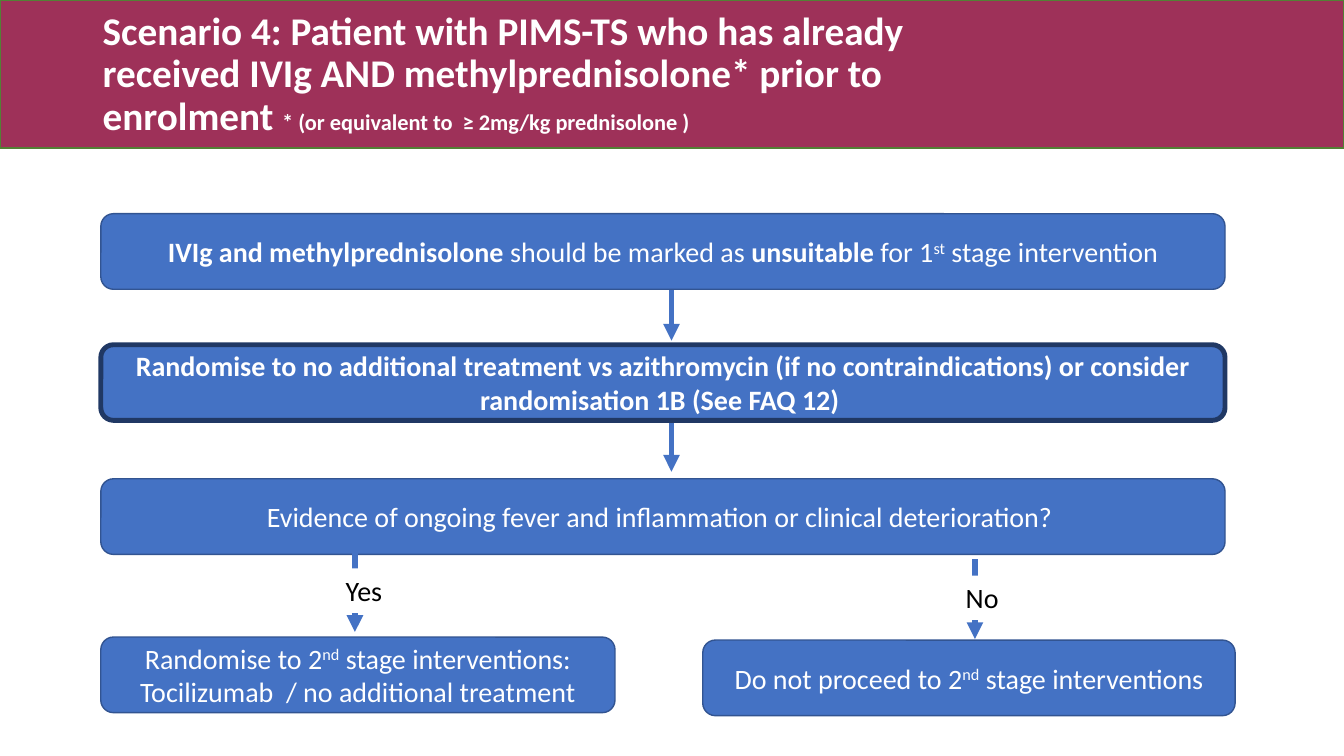
from lxml.etree import SubElement
from pptx import Presentation
from pptx.dml.color import RGBColor
from pptx.enum.shapes import MSO_CONNECTOR, MSO_SHAPE
from pptx.enum.text import MSO_ANCHOR, PP_ALIGN
from pptx.oxml.ns import qn
from pptx.util import Inches, Pt

PLUM = RGBColor(0x9E, 0x31, 0x59)
GREEN = RGBColor(0x53, 0x80, 0x35)
BLUE = RGBColor(0x44, 0x72, 0xC4)
EDGE = RGBColor(0x32, 0x54, 0x91)
NAVY = RGBColor(0x20, 0x38, 0x64)
WHITE = RGBColor(0xFF, 0xFF, 0xFF)
BLACK = RGBColor(0, 0, 0)

STEP_LEFT, STEP_WIDTH, STEP_HEIGHT = 1, 11.15, 0.75
MAIN_ARROW_X = 6.66
ARROW_LENGTH = 0.51
BRANCH_LENGTH = 0.79


def write(paragraph, pieces, color=WHITE, size=20, bold=None, align=PP_ALIGN.CENTER):
    paragraph.alignment = align
    font = paragraph.font
    font.name, font.size, font.bold = "Calibri", Pt(size), bold
    font.color.rgb = color
    for text, style in pieces:
        run = paragraph.add_run()
        run.text = text
        if style == "bold":
            run.font.bold = True
        elif style == "super":
            run._r.get_or_add_rPr().set("baseline", "30000")
        elif style == "note":
            run.font.size = Pt(16)


def add_panel(slide, kind, left, top, width, height, fill, edge=None, weight=1):
    panel = slide.shapes.add_shape(
        kind, Inches(left), Inches(top), Inches(width), Inches(height))
    panel.shadow.inherit = False
    panel.fill.solid()
    panel.fill.fore_color.rgb = fill
    if edge is None:
        panel.line.fill.background()
    else:
        panel.line.color.rgb = edge
        panel.line.width = Pt(weight)
    return panel


def add_header(slide, left, top, width, height):
    add_panel(slide, MSO_SHAPE.RECTANGLE, left, top, width, height, PLUM, GREEN)
    title = slide.shapes.add_textbox(
        Inches(left + 0.92), Inches(top + 0.02), Inches(8.92), Inches(height - 0.02))
    frame = title.text_frame
    frame.word_wrap = True
    frame.vertical_anchor = MSO_ANCHOR.MIDDLE
    scenario = frame.paragraphs[0]
    scenario.line_spacing = 0.9
    write(scenario, [
        ("Scenario 4: Patient with PIMS-TS who has already received IVIg AND "
         "methylprednisolone* prior to enrolment ", ""),
        ("* (or equivalent to  ≥ 2mg/kg prednisolone )", "note"),
    ], size=28, bold=True, align=PP_ALIGN.LEFT)


def add_step(slide, left, top, width, lines, edge=EDGE, weight=1, bold=None):
    step = add_panel(slide, MSO_SHAPE.ROUNDED_RECTANGLE, left, top, width,
                     STEP_HEIGHT, BLUE, edge, weight)
    frame = step.text_frame
    frame.word_wrap = True
    frame.vertical_anchor = MSO_ANCHOR.MIDDLE
    for index, pieces in enumerate(lines):
        paragraph = frame.add_paragraph() if index else frame.paragraphs[0]
        write(paragraph, pieces, bold=bold)


def add_arrow(slide, x, top, length):
    arrow = slide.shapes.add_connector(
        MSO_CONNECTOR.STRAIGHT, Inches(x), Inches(top), Inches(x), Inches(top + length))
    arrow.line.color.rgb = BLUE
    arrow.line.width = Pt(4)
    SubElement(arrow.line._get_or_add_ln(), qn("a:tailEnd"), type="triangle")
    SubElement(arrow._element.spPr, qn("a:effectLst"))


def add_branch(slide, x, top, answer):
    add_arrow(slide, x, top, BRANCH_LENGTH)
    label = add_panel(slide, MSO_SHAPE.RECTANGLE, x - 0.19, top + 0.16, 0.67, 0.44, WHITE)
    frame = label.text_frame
    frame.word_wrap = True
    frame.vertical_anchor = MSO_ANCHOR.TOP
    write(frame.paragraphs[0], [(answer, "")], color=BLACK, align=PP_ALIGN.LEFT)


def add_flowchart(slide, left, top, width):
    randomise_top, evidence_top = top + 1.3, top + 2.63
    for step_top in (top, randomise_top):
        add_arrow(slide, MAIN_ARROW_X, step_top + STEP_HEIGHT, ARROW_LENGTH)
    add_step(slide, left, top, width, [[
        ("IVIg and methylprednisolone ", "bold"), ("should be marked as ", ""),
        ("unsuitable", "bold"), (" for 1", ""), ("st", "super"),
        (" stage intervention", "")]])
    add_step(slide, left, randomise_top, width, [[
        ("Randomise to no additional treatment vs azithromycin (if no "
         "contraindications) or consider randomisation 1B (See FAQ 12) ", "")]],
        edge=NAVY, weight=3.5, bold=True)
    add_step(slide, left, evidence_top, width, [[
        ("Evidence of ongoing fever and inflammation or clinical deterioration? ", "")]])
    add_branch(slide, left + 2.52, top + 3.36, "Yes")
    add_branch(slide, left + 8.67, top + 3.43, "No")
    add_step(slide, left, top + 4.2, 5.1, [
        [("Randomise to 2", ""), ("nd", "super"), (" stage interventions:", "")],
        [("Tocilizumab  / no additional treatment", "")]])
    add_step(slide, left + 5.97, top + 4.23, 5.28, [
        [("Do not proceed to 2", ""), ("nd", "super"), (" stage interventions", "")]])


def main():
    deck = Presentation()
    deck.slide_width, deck.slide_height = Inches(13.33), Inches(7.5)
    slide = deck.slides.add_slide(deck.slide_layouts[6])
    add_header(slide, 0, 0, 13.33, 1.47)
    add_flowchart(slide, STEP_LEFT, 2.12, STEP_WIDTH)
    deck.save("out.pptx")


if __name__ == "__main__":
    main()
